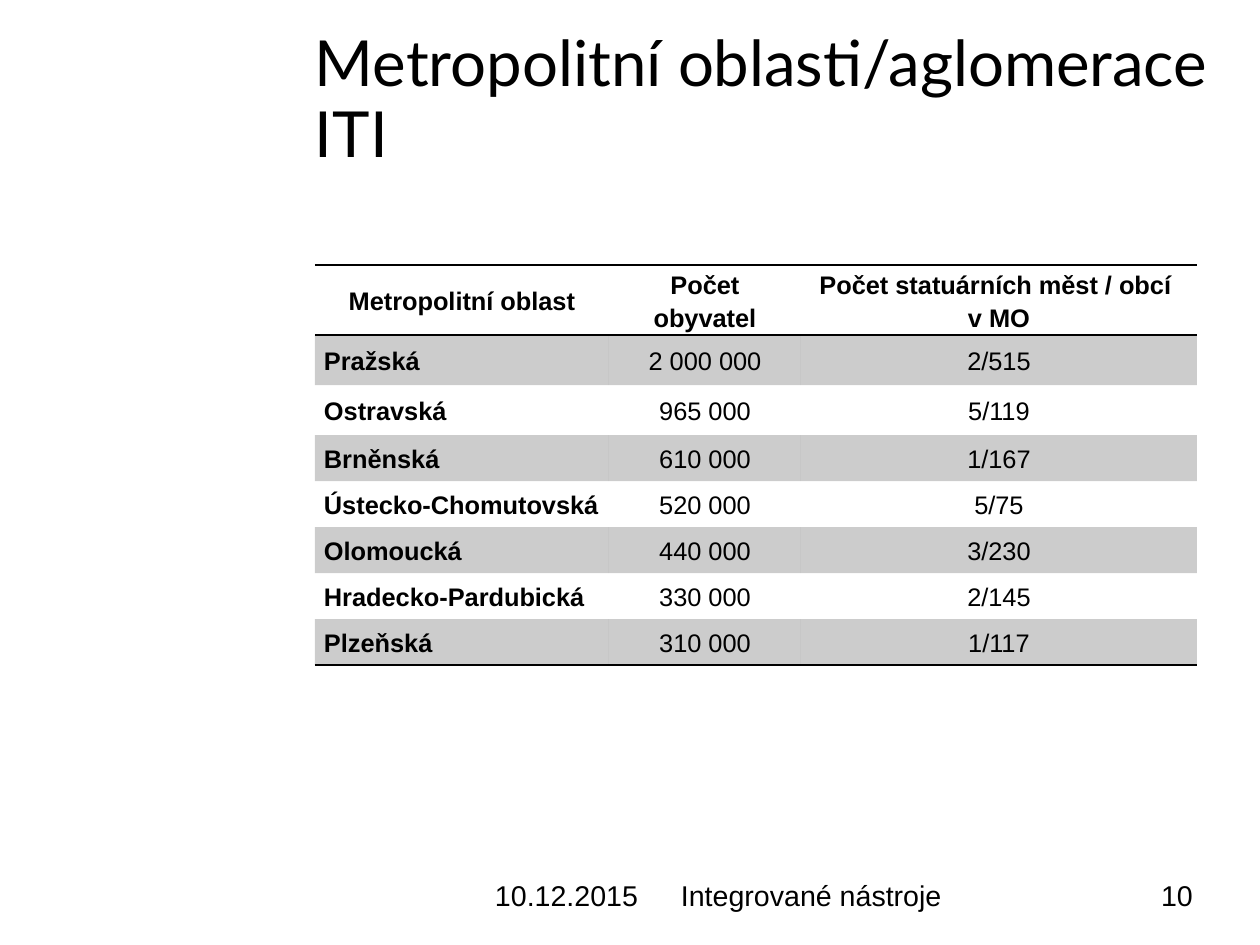
from dataclasses import dataclass

from lxml.etree import SubElement
from pptx import Presentation
from pptx.dml.color import RGBColor
from pptx.enum.text import MSO_ANCHOR as Anchor, PP_ALIGN as Align
from pptx.oxml import parse_xml
from pptx.oxml.ns import nsdecls, qn
from pptx.util import Pt

TITLE = "Metropolitní oblasti/aglomerace ITI"
FOOTERS = [
    ("10.12.2015", 495, 293),
    ("Integrované nástroje", 681, 398),
    ("10", 1161, 94),
]
ROWS = [
    ("Metropolitní oblast", "Počet obyvatel", "Počet statuárních měst / obcí \vv MO"),
    ("Pražská", "2 000 000", "2/515"),
    ("Ostravská", "965 000", "5/119"),
    ("Brněnská", "610 000", "1/167"),
    ("Ústecko-Chomutovská", "520 000", "5/75"),
    ("Olomoucká", "440 000", "3/230"),
    ("Hradecko-Pardubická", "330 000", "2/145"),
    ("Plzeňská", "310 000", "1/117"),
]
COLUMN_WIDTHS = [294, 192, 396]
ROW_HEIGHTS = [70, 50, 50, 46, 46, 46, 46, 46]
TABLE_LEFT, TABLE_TOP = 315, 265
FOOTER_TOP, FOOTER_HEIGHT = 878, 64
CELL_MARGIN = 9
EMU_PER_PX = 8000
PLAIN_TABLE_STYLE = "{2D5ABB26-0587-4C30-8999-92F81FD0307C}"


@dataclass(frozen=True)
class Theme:
    ink: str = "000000"
    band_alpha: int = 20
    rule_width: int = 1
    title_font: str = "Lato"
    body_font: str = "Arial"
    title_size: int = 40
    table_size: int = 16
    footer_size: int = 18
    title_spacing: float = 0.93
    table_spacing: float = 1.15


theme = Theme()


def px(length):
    return length * EMU_PER_PX


def style_text(text_frame, font_name, size, bold=False, align=Align.LEFT, spacing=1.0):
    for paragraph in text_frame.paragraphs:
        paragraph.alignment = align
        paragraph.line_spacing = spacing
        for run in paragraph.runs:
            run.font.name = font_name
            run.font.size = Pt(size)
            run.font.bold = bold
            run.font.color.rgb = RGBColor.from_string(theme.ink)


def add_text(slide, text, box, font_name, size, anchor=Anchor.TOP, spacing=1.0):
    text_frame = slide.shapes.add_textbox(*map(px, box)).text_frame
    text_frame.word_wrap = True
    text_frame.vertical_anchor = anchor
    text_frame.margin_left = text_frame.margin_right = 0
    text_frame.margin_top = text_frame.margin_bottom = 0
    text_frame.text = text
    style_text(text_frame, font_name, size, spacing=spacing)


def fill_band(cell):
    cell.fill.solid()
    cell.fill.fore_color.rgb = RGBColor.from_string(theme.ink)
    color = next(cell._tc.tcPr.iter(qn("a:srgbClr")))
    SubElement(color, qn("a:alpha")).set("val", str(theme.band_alpha * 1000))


def add_border(cell, side):
    border = parse_xml(
        f'<a:{side} {nsdecls("a")} w="{Pt(theme.rule_width)}"><a:solidFill>'
        f'<a:srgbClr val="{theme.ink}"/></a:solidFill></a:{side}>'
    )
    cell._tc.get_or_add_tcPr().insert(0, border)


def format_cell(cell, text, row, column):
    is_header = row == 0
    cell.text = text
    cell.vertical_anchor = Anchor.MIDDLE
    cell.margin_left = cell.margin_right = px(CELL_MARGIN)
    cell.margin_top = cell.margin_bottom = 0
    style_text(
        cell.text_frame,
        theme.body_font,
        theme.table_size,
        bold=is_header or column == 0,
        align=Align.CENTER if is_header or column else Align.LEFT,
        spacing=theme.table_spacing,
    )
    if row % 2:
        fill_band(cell)
    else:
        cell.fill.background()
    if row in (0, len(ROWS) - 1):
        add_border(cell, "lnB")
    if is_header:
        add_border(cell, "lnT")


def add_region_table(slide):
    frame = slide.shapes.add_table(
        len(ROWS), len(COLUMN_WIDTHS), px(TABLE_LEFT), px(TABLE_TOP),
        px(sum(COLUMN_WIDTHS)), px(sum(ROW_HEIGHTS)),
    )
    table = frame.table
    table.horz_banding = False
    next(table._tbl.iter(qn("a:tableStyleId"))).text = PLAIN_TABLE_STYLE
    for column, width in zip(table.columns, COLUMN_WIDTHS):
        column.width = px(width)
    for row, height in zip(table.rows, ROW_HEIGHTS):
        row.height = px(height)
    for row, texts in enumerate(ROWS):
        for column, text in enumerate(texts):
            format_cell(table.cell(row, column), text, row, column)


def main():
    presentation = Presentation()
    presentation.slide_width, presentation.slide_height = px(1260), px(945)
    slide = presentation.slides.add_slide(presentation.slide_layouts[6])
    add_text(slide, TITLE, (315, 30, 921, 142), theme.title_font, theme.title_size,
             Anchor.MIDDLE, theme.title_spacing)
    add_region_table(slide)
    for text, left, width in FOOTERS:
        add_text(slide, text, (left, FOOTER_TOP, width, FOOTER_HEIGHT),
                 theme.body_font, theme.footer_size)
    presentation.save("out.pptx")


if __name__ == "__main__":
    main()
